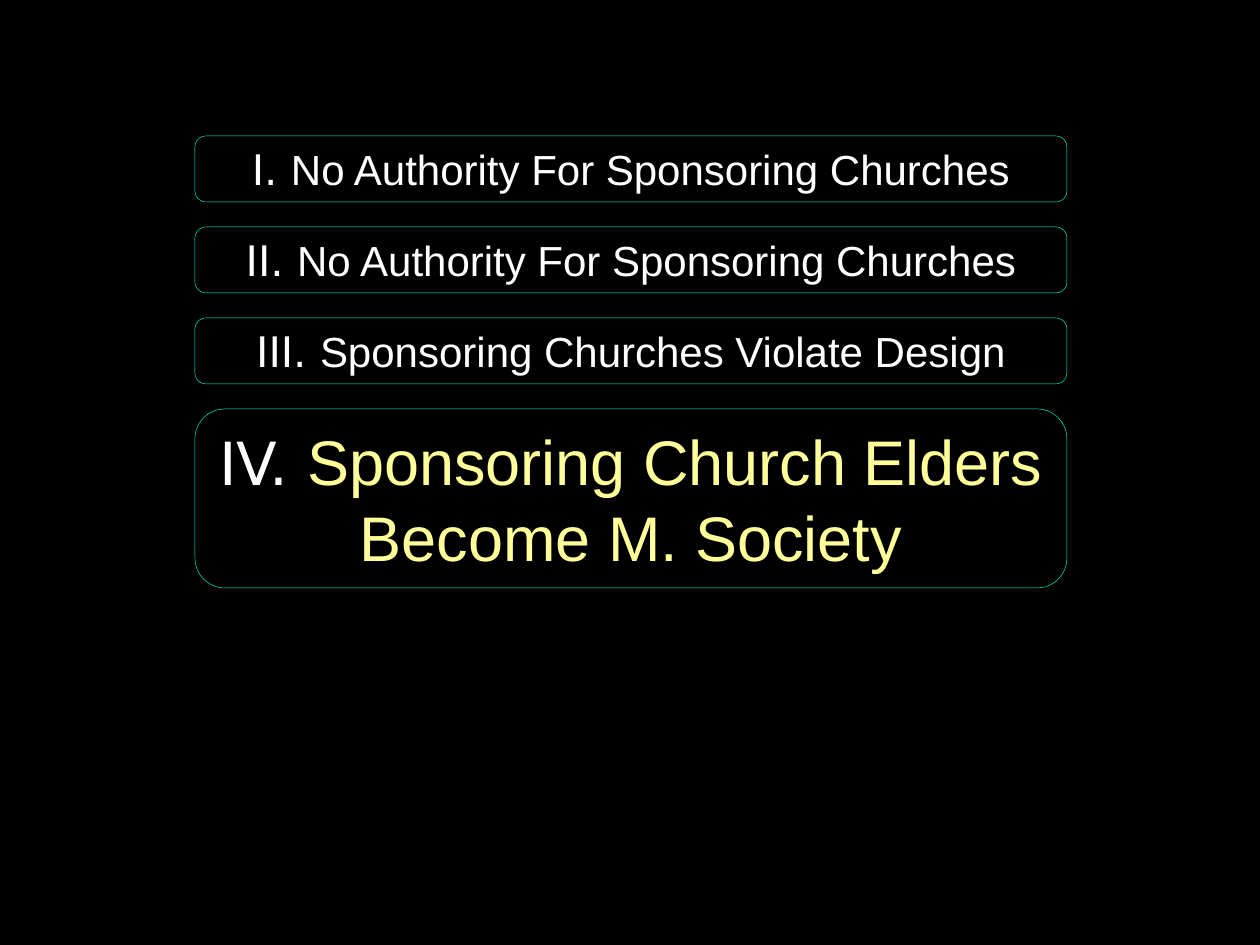
from pptx import Presentation
from pptx import util as u
from pptx.dml.color import RGBColor
from pptx.enum import shapes, text

PX = 914400 / 126  # EMU in one px
HUES = {"back": "000000", "edge": "00FFCC", "plain": "FFFFFF", "key": "FFFF99"}


def emu(n):
    return u.Emu(round(n * PX))


def hue(name):
    return RGBColor.from_string(HUES[name])


def add_run(para, words, face, size, tone):
    run = para.add_run()
    run.text = words
    run.font.name = face
    run.font.size = u.Pt(size)
    run.font.color.rgb = hue(tone)


def add_point(slide, box, mark, words, sizes, tone):
    """Place one outlined point: a numeral followed by its heading."""
    card = slide.shapes.add_shape(
        shapes.MSO_SHAPE.ROUNDED_RECTANGLE, *map(emu, box))
    card.shadow.inherit = False
    card.fill.solid()
    card.fill.fore_color.rgb = hue("back")
    card.line.color.rgb = hue("edge")
    card.line.width = u.Pt(0.25)

    frame = card.text_frame
    frame.word_wrap = True
    frame.vertical_anchor = text.MSO_ANCHOR.MIDDLE
    para = frame.paragraphs[0]
    para.alignment = text.PP_ALIGN.CENTER
    add_run(para, mark + " ", "DejaVu Sans", sizes[0], "plain")
    add_run(para, words, "Arial", sizes[1], tone)


def add_outline(slide, box, step):
    """Stack the points; the last one is current and fills the rest."""
    left, top, width, height = box
    points = [
        ("I.", "No Authority For Sponsoring Churches"),
        ("II.", "No Authority For Sponsoring Churches"),
        ("III.", "Sponsoring Churches Violate Design"),
        ("IV.", "Sponsoring Church Elders Become M. Society"),
    ]
    last = len(points) - 1
    for i, (mark, words) in enumerate(points):
        drop = i * step
        if i == last:
            tall, sizes, tone = height - drop, (34, 36), "key"
        else:
            tall, sizes, tone = 66, (24, 24), "plain"
        add_point(slide, (left, top + drop, width, tall),
                  mark, words, sizes, tone)


def main():
    deck = Presentation()
    deck.slide_width, deck.slide_height = emu(1260), emu(945)
    slide = deck.slides.add_slide(deck.slide_layouts[6])

    # Background
    fill = slide.background.fill
    fill.solid()
    fill.fore_color.rgb = hue("back")

    # Outline of points
    add_outline(slide, (195, 136, 872, 452), 91)
    deck.save("out.pptx")


if __name__ == "__main__":
    main()
